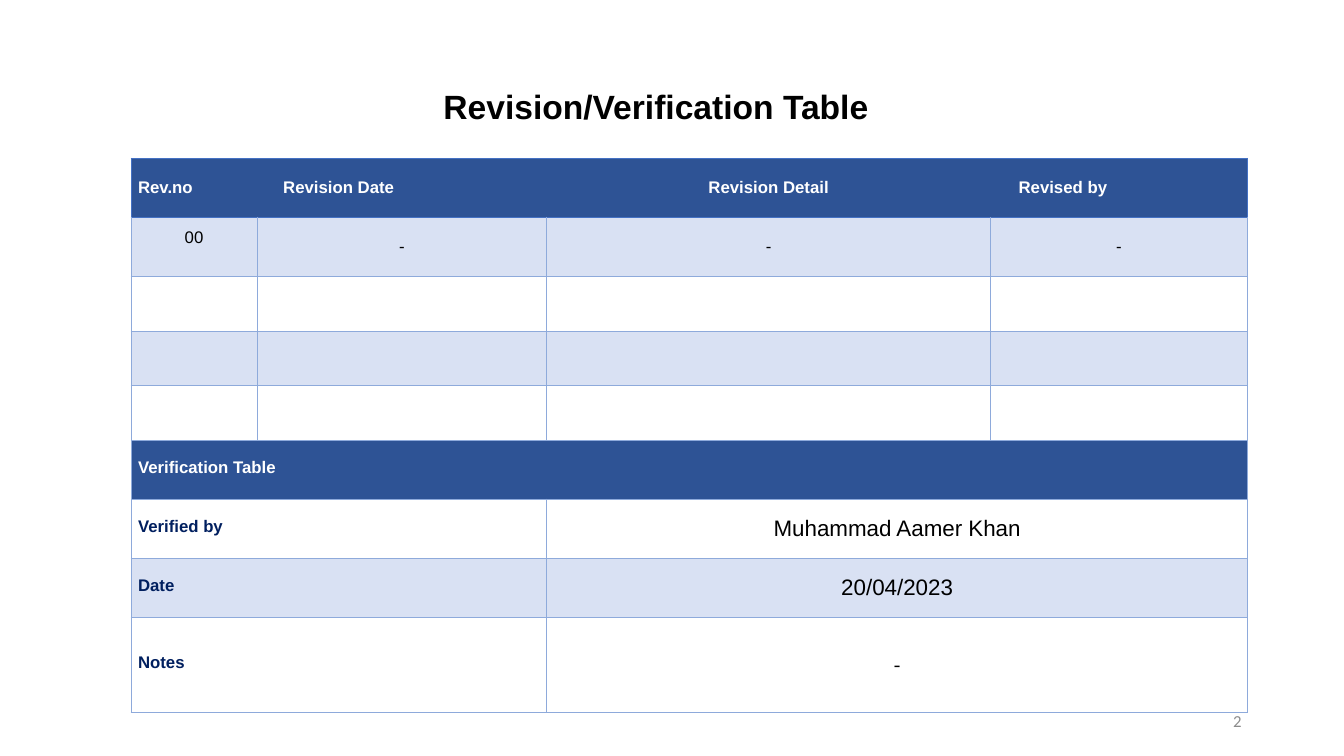
import pptx
import pptx.util
import pptx.dml.color
import pptx.enum.text
from lxml import etree

Pt = pptx.util.Pt
RGB = pptx.dml.color.RGBColor
ALIGN = pptx.enum.text.PP_ALIGN
MIDDLE = pptx.enum.text.MSO_ANCHOR.MIDDLE

BLACK = RGB(0x00, 0x00, 0x00)
WHITE = RGB(0xFF, 0xFF, 0xFF)
NAVY = RGB(0x00, 0x1F, 0x5F)
GREY = RGB(0x8C, 0x8C, 0x8C)
HEADER_FILL = RGB(0x2E, 0x53, 0x95)
BAND_FILL = RGB(0xD9, 0xE1, 0xF3)
HEADER_LINE = RGB(0x44, 0x71, 0xC4)
GRID_LINE = RGB(0x8E, 0xAA, 0xDB)

TITLE = "Revision/Verification Table"
PAGE_NUMBER = "2"
# heading, left margin, alignment
HEADINGS = [
    ("Rev.no", 5, ALIGN.LEFT),
    ("Revision Date", 18.7, ALIGN.LEFT),
    ("Revision Detail", 0, ALIGN.CENTER),
    ("Revised by", 20, ALIGN.LEFT),
]
# value, bottom margin
REVISION = [("00", 13), ("-", 0), ("-", 0), ("-", 0)]
SECTION = "Verification Table"
# label, value, value size, value font
VERIFICATION = [
    ("Verified by", "Muhammad Aamer Khan", 16, "Arial"),
    ("Date", "20/04/2023", 16, "Arial"),
    ("Notes", "-", 14, "Times New Roman"),
]
COL_WIDTHS = [90, 207, 317, 183.5]
ROW_HEIGHTS = [42.2] * 2 + [39] * 3 + [42.2] * 3 + [67.7]
SECTION_ROW = 5
BANDED_ROWS = (1, 3, 7)
TABLE_LEFT, TABLE_TOP = 93.6, 113

A = "http://schemas.openxmlformats.org/drawingml/2006/main"


def write(tf, text, size, color, align, bold=False, font="Arial"):
    tf.text = text
    p = tf.paragraphs[0]
    p.alignment = align
    f = p.runs[0].font
    f.name, f.size, f.bold = font, Pt(size), bold
    f.color.rgb = color


def fill_cell(cell, text, size, color, align, bold=False, font="Arial",
              left=0, bottom=0):
    cell.margin_left, cell.margin_bottom = Pt(left), Pt(bottom)
    cell.margin_right = cell.margin_top = 0
    cell.vertical_anchor = MIDDLE
    write(cell.text_frame, text, size, color, align, bold, font)


def set_border(cell, side, color):
    """Draw one side (L, R, T or B); a color of None leaves it open."""
    tcPr = cell._tc.get_or_add_tcPr()
    ln = etree.SubElement(tcPr, f"{{{A}}}ln{side}", w=str(Pt(0.5)))
    if color is None:
        etree.SubElement(ln, f"{{{A}}}noFill")
    else:
        fill = etree.SubElement(ln, f"{{{A}}}solidFill")
        etree.SubElement(fill, f"{{{A}}}srgbClr", val=str(color))


def style_cell(cell, row, col):
    last = len(COL_WIDTHS) - 1
    colors = dict.fromkeys("LRTB", GRID_LINE)
    if row == 0:
        colors = {"L": None if col else HEADER_LINE,
                  "R": HEADER_LINE if col == last else None,
                  "T": HEADER_LINE, "B": HEADER_LINE}
    elif row == 1:
        colors["T"] = HEADER_LINE
    for side, color in colors.items():
        set_border(cell, side, color)
    if row in (0, SECTION_ROW):
        cell.fill.solid()
        cell.fill.fore_color.rgb = HEADER_FILL
    elif row in BANDED_ROWS:
        cell.fill.solid()
        cell.fill.fore_color.rgb = BAND_FILL
    else:
        cell.fill.background()


def add_text(s, left, top, width, height, *args, **kwargs):
    tf = s.shapes.add_textbox(Pt(left), Pt(top), Pt(width), Pt(height)).text_frame
    tf.word_wrap = True
    tf.vertical_anchor = MIDDLE
    write(tf, *args, **kwargs)


def add_revision_table(s):
    frame = s.shapes.add_table(len(ROW_HEIGHTS), len(COL_WIDTHS),
                               Pt(TABLE_LEFT), Pt(TABLE_TOP),
                               Pt(sum(COL_WIDTHS)), Pt(sum(ROW_HEIGHTS)))
    table = frame.table
    table.first_row = table.horz_banding = False
    for column, width in zip(table.columns, COL_WIDTHS):
        column.width = Pt(width)
    for r, height in enumerate(ROW_HEIGHTS):
        table.rows[r].height = Pt(height)
        for c in range(len(COL_WIDTHS)):
            style_cell(table.cell(r, c), r, c)

    for c, (text, left, align) in enumerate(HEADINGS):
        fill_cell(table.cell(0, c), text, 12, WHITE, align, True, left=left)
    for c, (text, bottom) in enumerate(REVISION):
        fill_cell(table.cell(1, c), text, 12, BLACK, ALIGN.CENTER, bottom=bottom)

    section = table.cell(SECTION_ROW, 0)
    section.merge(table.cell(SECTION_ROW, 3))
    fill_cell(section, SECTION, 12, WHITE, ALIGN.LEFT, True, left=5, bottom=3)
    for r, (label, value, size, font) in enumerate(VERIFICATION, SECTION_ROW + 1):
        name, entry = table.cell(r, 0), table.cell(r, 2)
        name.merge(table.cell(r, 1))
        entry.merge(table.cell(r, 3))
        fill_cell(name, label, 12, NAVY, ALIGN.LEFT, True, left=5, bottom=3)
        fill_cell(entry, value, size, BLACK, ALIGN.CENTER, font=font)


def main():
    prs = pptx.Presentation()
    prs.slide_width, prs.slide_height = Pt(960), Pt(540)
    s = prs.slides.add_slide(prs.slide_layouts[6])
    add_text(s, 257, 55.5, 423, 40, TITLE, 24, BLACK, ALIGN.CENTER, bold=True)
    add_revision_table(s)
    add_text(s, 678, 500.5, 216, 29, PAGE_NUMBER, 12, GREY, ALIGN.RIGHT,
             font="Calibri")
    prs.save("out.pptx")


if __name__ == "__main__":
    main()
